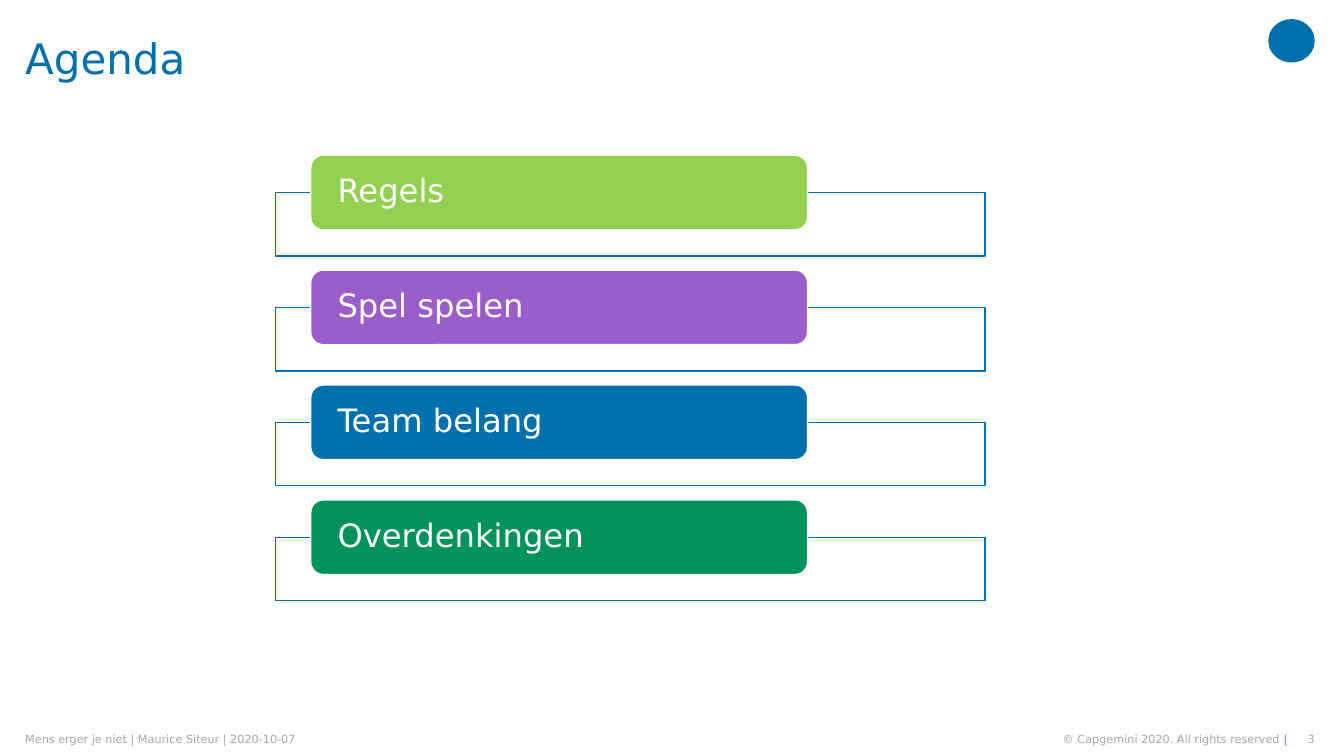
"""Builds the agenda slide with four topic bars and a footer."""
from lxml.etree import SubElement
from pptx import Presentation
from pptx.dml.color import RGBColor
from pptx.enum.shapes import MSO_SHAPE as Preset
from pptx.enum.text import MSO_ANCHOR as Anchor, PP_ALIGN as Align
from pptx.oxml.ns import qn
from pptx.util import Inches, Pt

FONT = "DejaVu Sans"
BLUE, CYAN, GREY, WHITE = "0070AD", "12ABDB", "A6A6A6", "FFFFFF"
WIDTH, HEIGHT = 13.33, 7.5
MARGIN = 0.25

TITLE = "Agenda"
TOPICS = [
    ("Regels", "92D050"),
    ("Spel spelen", "9A5DCA"),
    ("Team belang", BLUE),
    ("Overdenkingen", "00925C"),
]
FOOTERS = [
    ([("Mens erger je niet | Maurice Siteur | 2020-10-07", GREY)], MARGIN, 5.16, Align.LEFT),
    ([("© Capgemini 2020. All rights reserved ", GREY), ("|", CYAN)], 9.86, 2.91, Align.RIGHT),
    ([("3", GREY)], 12.85, 0.19, Align.RIGHT),
]

FIRST_TOP, PITCH = 1.54, 1.14
FRAME_LEFT, FRAME_WIDTH, FRAME_HEIGHT = 2.73, 7.04, 0.63
BAR_HEIGHT = 0.74
BAR_LEFT, BAR_WIDTH = FRAME_LEFT + FRAME_WIDTH * 0.05, FRAME_WIDTH * 0.7
BAR_INSET = 0.23


def color(value):
    return RGBColor.from_string(value)


def write(frame, runs, size, align=Align.LEFT, inset=0, spacing=None, wrap=True):
    """Fill a text frame with one paragraph of (text, colour) runs."""
    frame.word_wrap = wrap
    frame.vertical_anchor = Anchor.MIDDLE
    frame.margin_left = frame.margin_right = Inches(inset)
    frame.margin_top = frame.margin_bottom = 0
    paragraph = frame.paragraphs[0]
    paragraph.alignment = align
    paragraph.line_spacing = spacing
    for text, tint in runs:
        run = paragraph.add_run()
        run.text = text
        run.font.name = FONT
        run.font.size = Pt(size)
        run.font.color.rgb = color(tint)


def add_box(slide, preset, left, top, width, height, fill, line=None):
    """Add a flat filled shape, outlined when a line colour is given."""
    box = slide.shapes.add_shape(preset, *map(Inches, (left, top, width, height)))
    box.shadow.inherit = False
    box.fill.solid()
    box.fill.fore_color.rgb = color(fill)
    if line:
        box.line.color.rgb = color(line)
        box.line.width = Pt(1)
    else:
        box.line.fill.background()
    return box


def add_topic(slide, row, topic, fill):
    """Add one agenda row: an open frame with a coloured bar on its top edge."""
    top = FIRST_TOP + row * PITCH
    frame = add_box(slide, Preset.RECTANGLE, FRAME_LEFT, top + BAR_HEIGHT / 2,
                    FRAME_WIDTH, FRAME_HEIGHT, WHITE, BLUE)
    tint = frame.fill._xPr.find(qn("a:solidFill"))[0]
    SubElement(tint, qn("a:alpha"), val="90000")
    bar = add_box(slide, Preset.ROUNDED_RECTANGLE, BAR_LEFT, top,
                  BAR_WIDTH, BAR_HEIGHT, fill, WHITE)
    write(bar.text_frame, [(topic, WHITE)], 23, inset=BAR_INSET, spacing=0.9)


def main():
    deck = Presentation()
    deck.slide_width, deck.slide_height = Inches(WIDTH), Inches(HEIGHT)
    slide = deck.slides.add_slide(deck.slide_layouts[5])

    title = slide.shapes.title
    title.left, title.top = Inches(MARGIN), 0
    title.width, title.height = Inches(12.17), Inches(1.21)
    write(title.text_frame, [(TITLE, BLUE)], 30, spacing=0.9)

    add_box(slide, Preset.OVAL, 12.58, 0.19, 0.46, 0.43, BLUE)
    for row, (topic, fill) in enumerate(TOPICS):
        add_topic(slide, row, topic, fill)
    for runs, left, width, align in FOOTERS:
        footer = slide.shapes.add_textbox(*map(Inches, (left, 7.27, width, 0.13)))
        write(footer.text_frame, runs, 8, align)

    deck.save("out.pptx")


if __name__ == "__main__":
    main()
